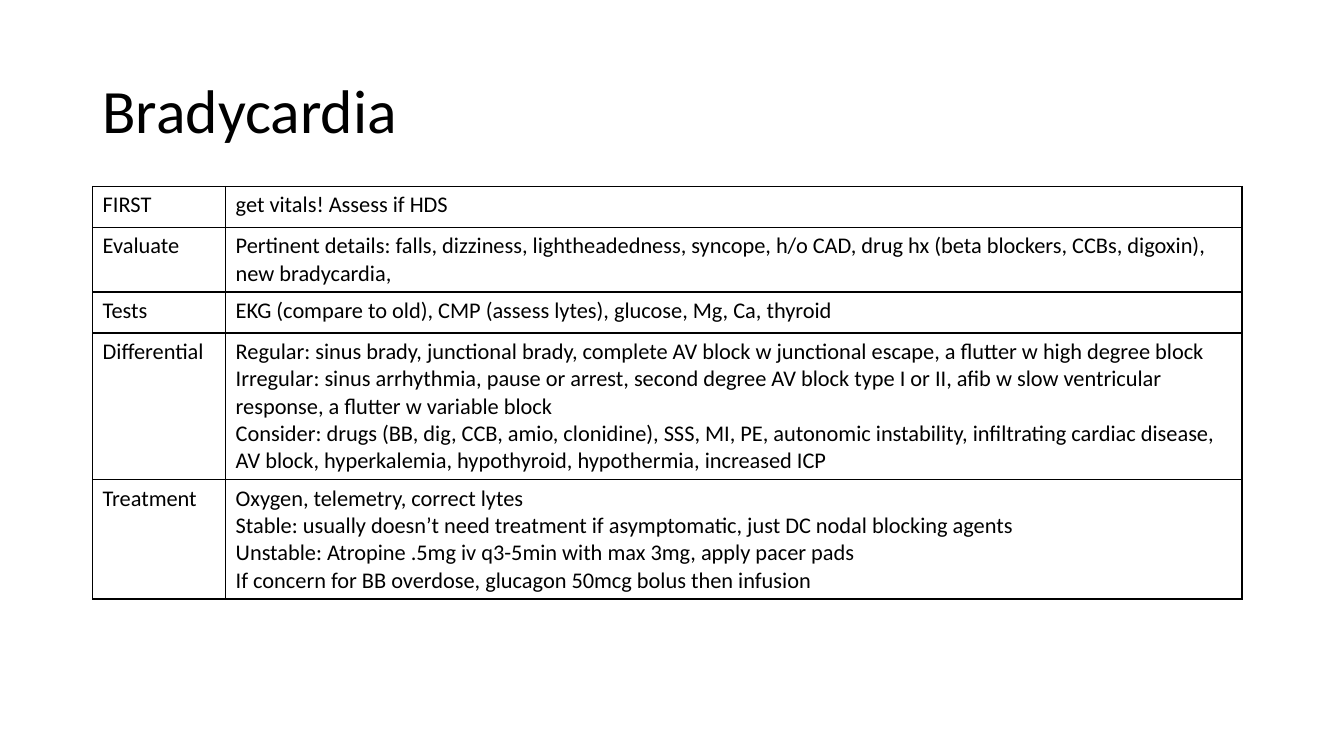
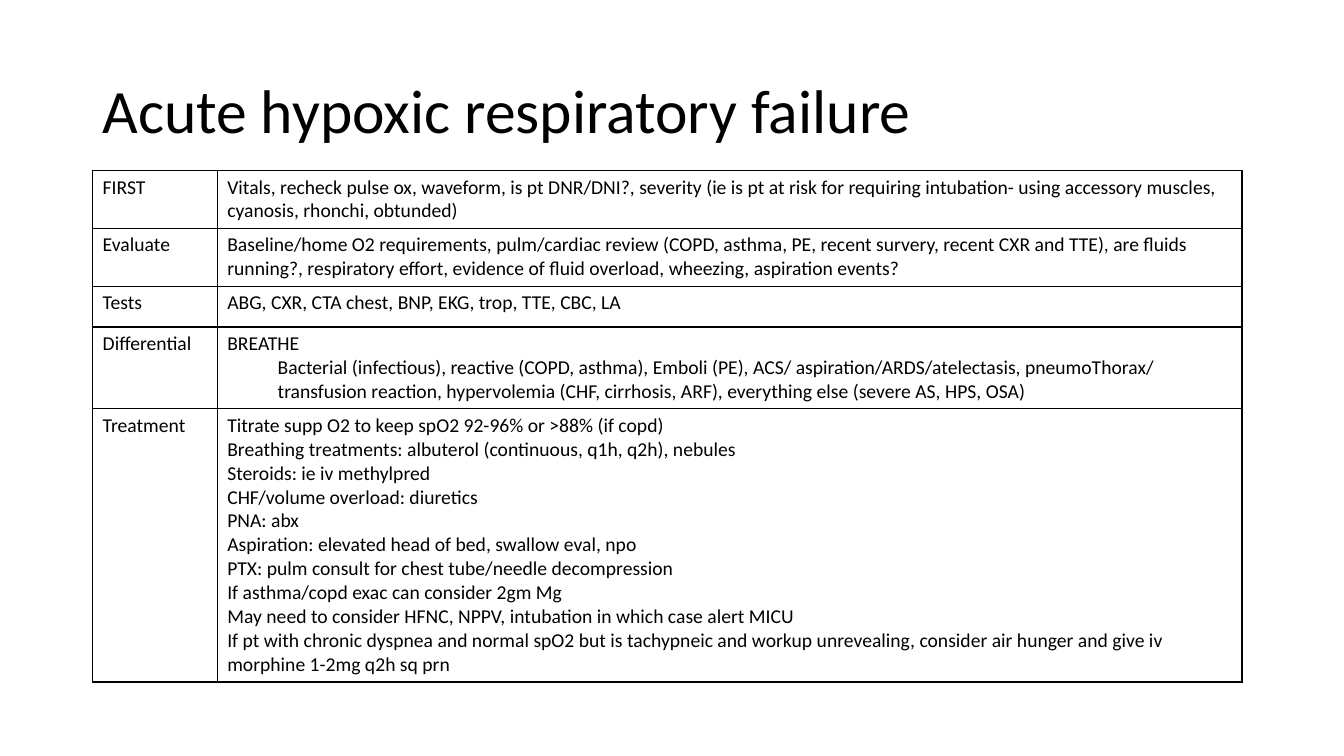
"""Build two clinical reference slides, each a title over a bordered table."""
import pptx
import pptx.dml.color
import pptx.enum.text
import pptx.oxml
import pptx.oxml.ns
import pptx.util

Pt = pptx.util.Pt
INK = "000000"
FACE = "Calibri"
LEFT = 66.2
WIDTH = 821
TITLE = {"left": LEFT, "top": 28.8, "width": 828, "height": 104.4}
LEAST = 29.2
LEADING = 1.22
PADDING = 7.2

PAGES = [
    {
        "title": "Bradycardia", "top": 133.2, "first": 95, "size": 16,
        "rows": [
            ("FIRST", 1, ["get vitals! Assess if HDS"]),
            ("Evaluate", 2, [
                "Pertinent details: falls, dizziness, lightheadedness, syncope, h/o CAD, "
                "drug hx (beta blockers, CCBs, digoxin), new bradycardia,"]),
            ("Tests", 1, ["EKG (compare to old), CMP (assess lytes), glucose, Mg, Ca, thyroid"]),
            ("Differential", 5, [
                "Regular: sinus brady, junctional brady, complete AV block w junctional escape, "
                "a flutter w high degree block",
                "Irregular: sinus arrhythmia, pause or arrest, second degree AV block type I or II, "
                "afib w slow ventricular response, a flutter w variable block",
                "Consider: drugs (BB, dig, CCB, amio, clonidine), SSS, MI, PE, autonomic instability, "
                "infiltrating cardiac disease, AV block, hyperkalemia, hypothyroid, hypothermia, "
                "increased ICP"]),
            ("Treatment", 4, [
                "Oxygen, telemetry, correct lytes",
                "Stable: usually doesn’t need treatment if asymptomatic, just DC nodal blocking agents",
                "Unstable: Atropine .5mg iv q3-5min with max 3mg, apply pacer pads",
                "If concern for BB overdose, glucagon 50mcg bolus then infusion"]),
        ],
    },
    {
        "title": "Acute hypoxic respiratory failure", "top": 121.7, "first": 89, "size": 14,
        "rows": [
            ("FIRST", 2, [
                "Vitals, recheck pulse ox, waveform, is pt DNR/DNI?, severity (ie is pt at risk for "
                "requiring intubation- using accessory muscles, cyanosis, rhonchi, obtunded)"]),
            ("Evaluate", 2, [
                "Baseline/home O2 requirements, pulm/cardiac review (COPD, asthma, PE, recent survery, "
                "recent CXR and TTE), are fluids running?, respiratory effort, evidence of fluid "
                "overload, wheezing, aspiration events?"]),
            ("Tests", 1, ["ABG, CXR, CTA chest, BNP, EKG, trop, TTE, CBC, LA"]),
            ("Differential", 3, [
                "BREATHE",
                ("Bacterial (infectious), reactive (COPD, asthma), Emboli (PE), ACS/ "
                 "aspiration/ARDS/atelectasis, pneumoThorax/ transfusion reaction, hypervolemia "
                 "(CHF, cirrhosis, ARF), everything else (severe AS, HPS, OSA)", 36)]),
            ("Treatment", 11, [
                "Titrate supp O2 to keep spO2 92-96% or >88% (if copd)",
                "Breathing treatments: albuterol (continuous, q1h, q2h), nebules",
                "Steroids: ie iv methylpred",
                "CHF/volume overload: diuretics",
                "PNA: abx",
                "Aspiration: elevated head of bed, swallow eval, npo",
                "PTX: pulm consult for chest tube/needle decompression",
                "If asthma/copd exac can consider 2gm Mg",
                "May need to consider HFNC, NPPV, intubation in which case alert MICU",
                "If pt with chronic dyspnea and normal spO2 but is tachypneic and workup unrevealing, "
                "consider air hunger and give iv morphine 1-2mg q2h sq prn"]),
        ],
    },
]


def paint(text):
    """Turn a hex string into a colour."""
    return pptx.dml.color.RGBColor.from_string(text)


def assign(item, values):
    """Set each attribute named in a dict."""
    for name, value in values.items():
        setattr(item, name, value)


def write(frame, texts, size):
    """Fill a text frame with paragraphs; a pair holds text and indent."""
    for spot, entry in enumerate(texts):
        text, indent = (entry, 0) if isinstance(entry, str) else entry
        para = frame.add_paragraph() if spot else frame.paragraphs[0]
        run = para.add_run()
        run.text = text
        assign(run.font, {"name": FACE, "size": Pt(size), "bold": False})
        run.font.color.rgb = paint(INK)
        if indent:
            para._p.get_or_add_pPr().set("marL", str(Pt(indent)))


def border(cell):
    """Draw a thin line on all four sides of a cell."""
    props = cell._tc.get_or_add_tcPr()
    for side in ("lnL", "lnR", "lnT", "lnB"):
        props.append(pptx.oxml.parse_xml(
            f'<a:{side} {pptx.oxml.ns.nsdecls("a")} w="{Pt(1)}"><a:solidFill>'
            f'<a:srgbClr val="{INK}"/></a:solidFill></a:{side}>'))


def add_title(slide, text):
    """Add the slide title."""
    box = slide.shapes.add_textbox(**{name: Pt(value) for name, value in TITLE.items()})
    frame = box.text_frame
    assign(frame, {"word_wrap": True,
                   "vertical_anchor": pptx.enum.text.MSO_ANCHOR.MIDDLE})
    write(frame, [text], 44)
    frame.paragraphs[0].line_spacing = 0.9


def add_grid(slide, page):
    """Add a two-column table with row heights fitted to their lines."""
    rows, size = page["rows"], page["size"]
    tall = [max(LEAST, lines * size * LEADING + PADDING) for _, lines, _ in rows]
    grid = slide.shapes.add_table(len(rows), 2, Pt(LEFT), Pt(page["top"]),
                                  Pt(WIDTH), Pt(sum(tall))).table
    assign(grid, {"first_row": False, "horz_banding": False})
    for col, wide in zip(grid.columns, (page["first"], WIDTH - page["first"])):
        col.width = Pt(wide)
    for row, high, (label, _, texts) in zip(grid.rows, tall, rows):
        row.height = Pt(high)
        for cell, words in zip(row.cells, ([label], texts)):
            border(cell)
            cell.fill.background()
            write(cell.text_frame, words, size)


def main():
    """Build and save the deck."""
    deck = pptx.Presentation()
    assign(deck, {"slide_width": Pt(960), "slide_height": Pt(540)})
    for page in PAGES:
        slide = deck.slides.add_slide(deck.slide_layouts[6])
        add_title(slide, page["title"])
        add_grid(slide, page)
    deck.save("out.pptx")


if __name__ == "__main__":
    main()
